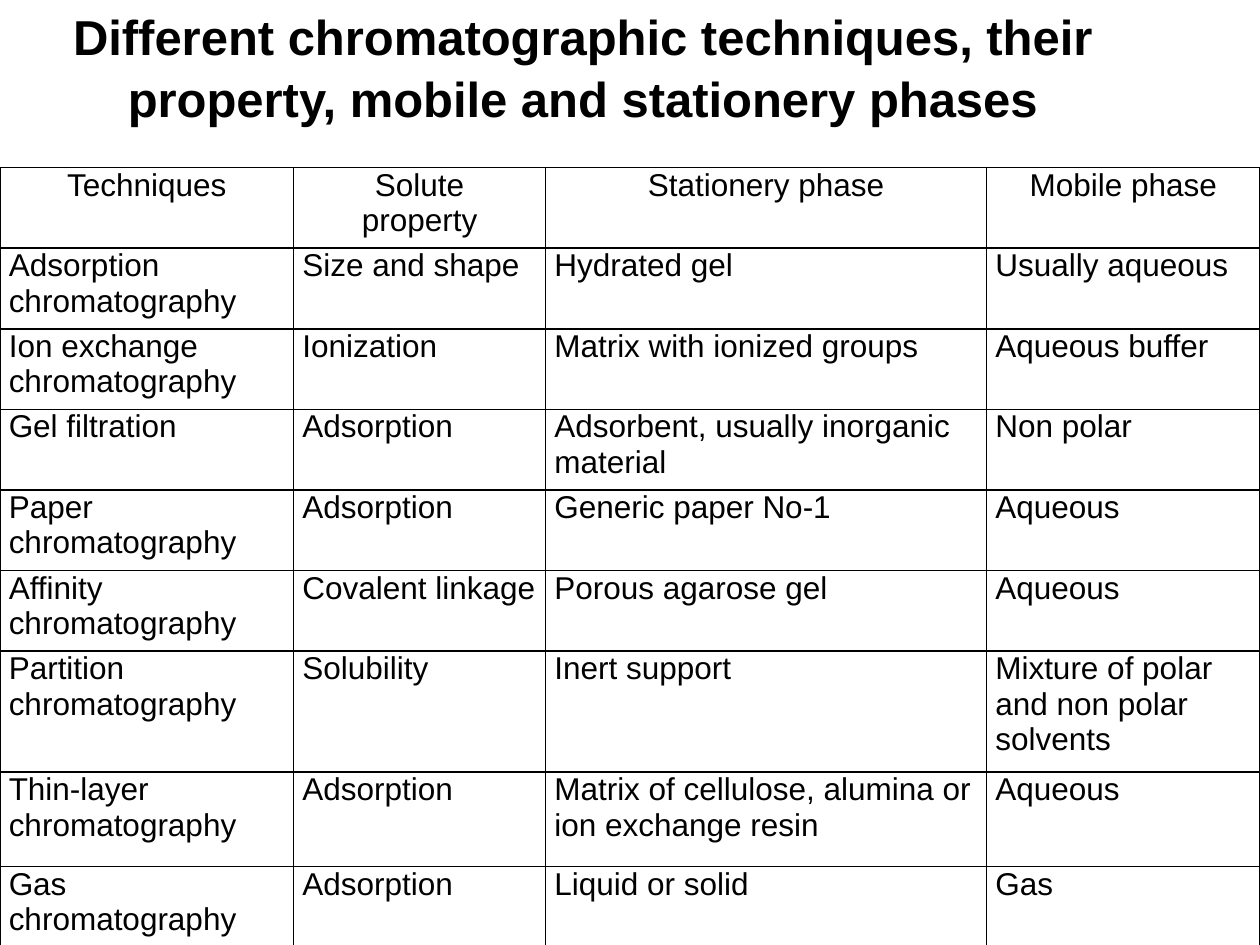
from lxml.etree import SubElement
from pptx import Presentation
from pptx.dml.color import RGBColor
from pptx.enum.text import MSO_ANCHOR as Anchor, PP_ALIGN as Align
from pptx.oxml.ns import qn
from pptx.util import Inches, Pt

BLACK = RGBColor(0, 0, 0)
TITLE = "Different chromatographic techniques, their property, mobile and stationery phases"
HEADINGS = ("Techniques", "Solute\nproperty", "Stationery phase", "Mobile phase")
TECHNIQUES = (
    ("Adsorption chromatography", "Size and shape", "Hydrated gel", "Usually aqueous"),
    ("Ion exchange chromatography", "Ionization", "Matrix with ionized groups", "Aqueous buffer"),
    ("Gel filtration", "Adsorption", "Adsorbent, usually inorganic material", "Non polar"),
    ("Paper chromatography", "Adsorption", "Generic paper No-1", "Aqueous"),
    ("Affinity chromatography", "Covalent linkage", "Porous agarose gel", "Aqueous"),
    ("Partition chromatography", "Solubility", "Inert support", "Mixture of polar and non polar solvents"),
    ("Thin-layer chromatography", "Adsorption",
     "Matrix of cellulose, alumina or ion exchange resin", "Aqueous"),
    ("Gas chromatography", "Adsorption", "Liquid or solid", "Gas"),
)
COLUMN_WIDTHS = (2.33, 2, 3.5, 2.17)
ROW_HEIGHTS = (0.64,) * 6 + (0.96, 0.75, 0.64)


def write_text(frame, text, size=18, bold=False, align=Align.LEFT, spacing=1.0):
    """Fill a text frame with one formatted paragraph per line of text."""
    frame.word_wrap = True
    frame.text = text
    for paragraph in frame.paragraphs:
        paragraph.alignment = align
        paragraph.line_spacing = spacing
        font = paragraph.runs[0].font
        font.name, font.size, font.bold = "Arial", Pt(size), bold
        font.color.rgb = BLACK


def add_borders(cell, width=1):
    """Draw a solid line on all four sides of a cell."""
    properties = cell._tc.get_or_add_tcPr()
    for side in ("lnL", "lnR", "lnT", "lnB"):
        line = SubElement(properties, qn(f"a:{side}"), w=str(Pt(width)))
        SubElement(SubElement(line, qn("a:solidFill")), qn("a:srgbClr"), val=str(BLACK))


def add_title(slide, left, top, width, height):
    """Place the centred heading in its box."""
    heading = slide.shapes.add_textbox(Inches(left), Inches(top), Inches(width), Inches(height))
    heading.text_frame.vertical_anchor = Anchor.MIDDLE
    write_text(heading.text_frame, TITLE, size=28, bold=True, align=Align.CENTER, spacing=1.05)


def add_techniques(slide, left, top, width, height):
    """Place the ruled table of techniques in its box."""
    rows = (HEADINGS, *TECHNIQUES)
    table = slide.shapes.add_table(len(rows), len(HEADINGS), Inches(left), Inches(top),
                                   Inches(width), Inches(height)).table
    table.first_row = table.horz_banding = False
    for column, column_width in zip(table.columns, COLUMN_WIDTHS):
        column.width = Inches(column_width)
    for row, row_height, texts in zip(table.rows, ROW_HEIGHTS, rows):
        row.height = Inches(row_height)
        align = Align.CENTER if texts is HEADINGS else Align.LEFT
        for cell, text in zip(row.cells, texts):
            cell.margin_left = cell.margin_right = Inches(0.07)
            cell.margin_top = cell.margin_bottom = 0
            write_text(cell.text_frame, text, align=align)
            add_borders(cell)
            cell.fill.background()


def main():
    """Build and save the slide."""
    deck = Presentation()
    deck.slide_width, deck.slide_height = Inches(10), Inches(7.5)
    slide = deck.slides.add_slide(deck.slide_layouts[6])
    add_title(slide, 0.25, 0, 8.75, 1.04)
    add_techniques(slide, 0, 1.33, 10, 6.17)
    deck.save("out.pptx")


if __name__ == "__main__":
    main()
